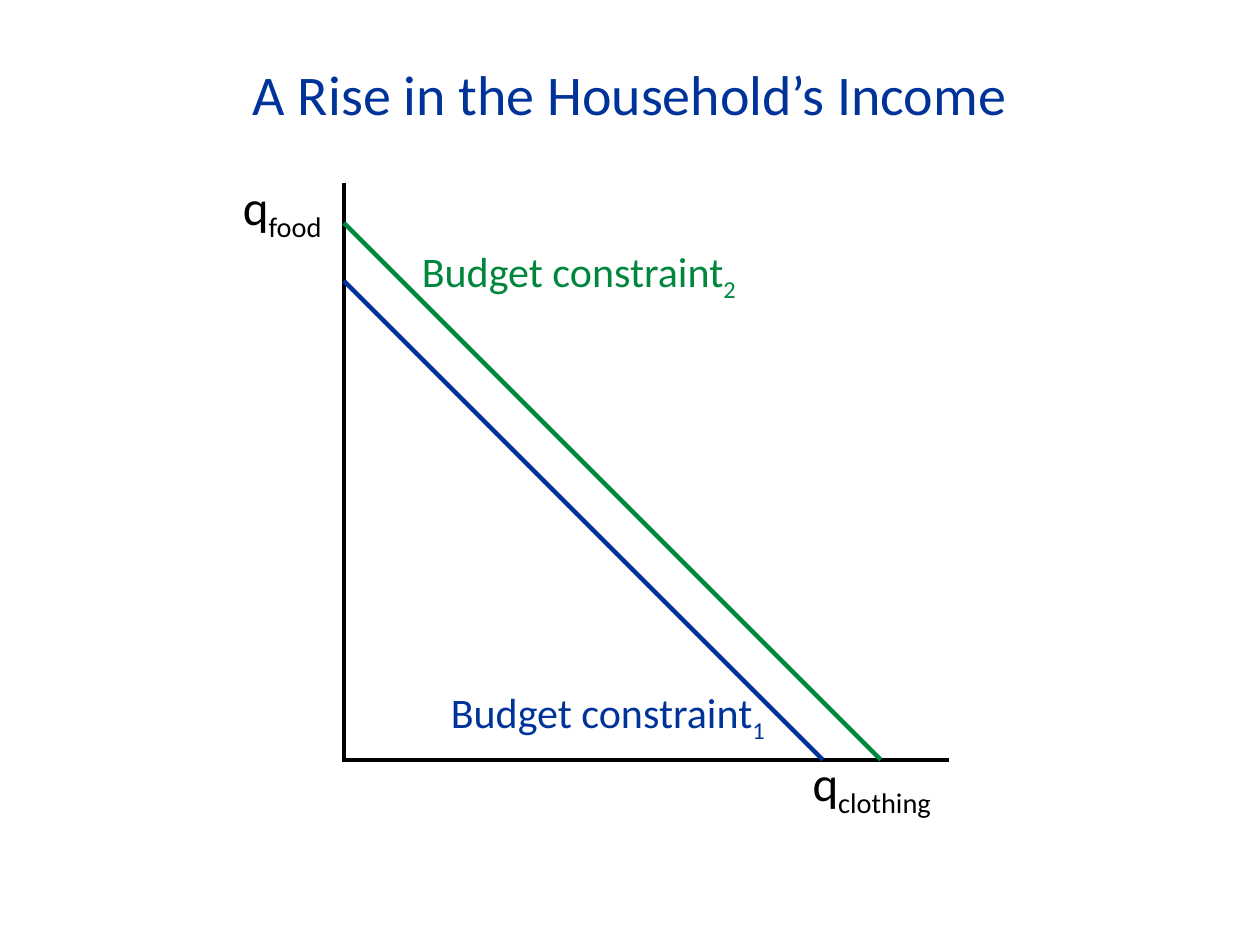
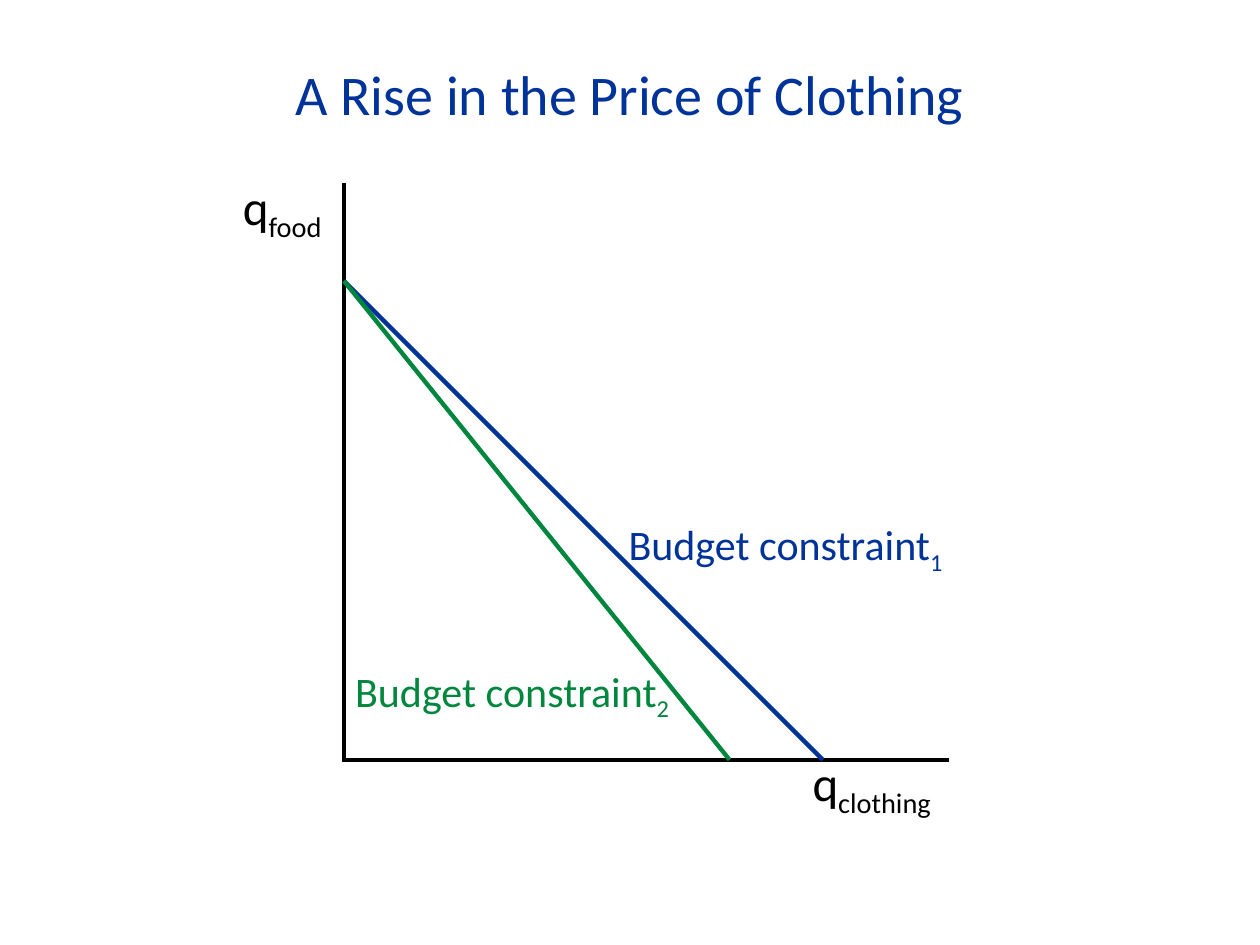
from dataclasses import dataclass

import pptx
import pptx.dml.color
import pptx.enum.shapes
import pptx.enum.text
import pptx.util
from lxml import etree

COLUMNS, ROWS = 100, 75
CELL = pptx.util.Inches(0.1)


def cells(count):
    return round(count * CELL)


def color(value):
    return pptx.dml.color.RGBColor.from_string(value)


@dataclass(frozen=True)
class Theme:
    font: str = "Calibri"
    white: str = "FFFFFF"
    black: str = "000000"
    blue: str = "003399"
    green: str = "00863D"
    title_size: int = 32
    axis_size: int = 28
    label_size: int = 24
    line_width: float = 2.5


@dataclass(frozen=True)
class Box:
    left: float
    top: float
    width: float
    height: float

    def from_origin(self, right, up):
        return self.left + right, self.top + self.height - up


@dataclass(frozen=True)
class Constraint:
    number: str
    color: str
    food: float
    clothing: float
    label_right: float
    label_up: float


THEME = Theme()
BODY = Box(7, 4.5, 86, 66)
PLOT = Box(27.3, 14.5, 48, 45.8)

SLIDES = [
    ("A Rise in the Household’s Income", [
        Constraint("1", THEME.blue, 38, 38, 7.5, 6.3),
        Constraint("2", THEME.green, 42.6, 42.6, 5.2, 41.3),
    ]),
    ("A Rise in the Price of Clothing", [
        Constraint("1", THEME.blue, 38, 38, 21.6, 19.6),
        Constraint("2", THEME.green, 38, 30.6, -0.1, 8),
    ]),
]


def style(paragraph, size, text_color):
    paragraph.font.name = THEME.font
    paragraph.font.size = pptx.util.Pt(size)
    paragraph.font.color.rgb = color(text_color)


def add_text_box(slide, box):
    shape = slide.shapes.add_textbox(
        *map(cells, (box.left, box.top, box.width, box.height)))
    shape.text_frame.word_wrap = True
    return shape


def add_line(slide, start, end, line_color):
    connector = slide.shapes.add_connector(
        pptx.enum.shapes.MSO_CONNECTOR.STRAIGHT, *map(cells, (*start, *end)))
    connector.line.color.rgb = color(line_color)
    connector.line.width = pptx.util.Pt(THEME.line_width)
    etree.SubElement(connector._element.spPr, pptx.oxml.ns.qn("a:effectLst"))


def add_label(slide, box, word, subscript, size, text_color, spacing=None):
    frame = add_text_box(slide, box).text_frame
    frame.auto_size = pptx.enum.text.MSO_AUTO_SIZE.SHAPE_TO_FIT_TEXT
    paragraph = frame.paragraphs[0]
    paragraph.line_spacing = spacing
    paragraph.add_run().text = word
    lowered = paragraph.add_run()
    lowered.text = subscript
    lowered._r.get_or_add_rPr().set("baseline", "-25000")
    style(paragraph, size, text_color)


def add_title(slide, box, title):
    shape = add_text_box(slide, box)
    shape.fill.solid()
    shape.fill.fore_color.rgb = color(THEME.white)
    frame = shape.text_frame
    frame.margin_top = cells(0.2)
    frame.margin_bottom = 0
    paragraph = frame.paragraphs[0]
    paragraph.text = title
    paragraph.alignment = pptx.enum.text.PP_ALIGN.CENTER
    style(paragraph, THEME.title_size, THEME.blue)


def add_axes(slide, plot):
    add_line(slide, plot.from_origin(0, plot.height),
             plot.from_origin(0, -0.2), THEME.black)
    add_line(slide, plot.from_origin(0, 0),
             plot.from_origin(plot.width, 0), THEME.black)
    add_label(slide, Box(*plot.from_origin(36.2, 1.1), 13.2, 5.7),
              "q", "clothing", THEME.axis_size, THEME.black)
    add_label(slide, Box(*plot.from_origin(-9, 46.3), 11.7, 4.9),
              "q", "food", THEME.axis_size, THEME.black, spacing=0.8)


def add_constraint(slide, plot, constraint):
    add_line(slide, plot.from_origin(0, constraint.food),
             plot.from_origin(constraint.clothing, 0), constraint.color)
    corner = plot.from_origin(constraint.label_right, constraint.label_up)
    add_label(slide, Box(*corner, 31.7, 5), "Budget constraint",
              constraint.number, THEME.label_size, constraint.color)


def add_budget_slide(presentation, title, constraints):
    slide = presentation.slides.add_slide(presentation.slide_layouts[6])
    add_title(slide, BODY, title)
    add_axes(slide, PLOT)
    for constraint in constraints:
        add_constraint(slide, PLOT, constraint)


def main():
    presentation = pptx.Presentation()
    presentation.slide_width = cells(COLUMNS)
    presentation.slide_height = cells(ROWS)
    for title, constraints in SLIDES:
        add_budget_slide(presentation, title, constraints)
    presentation.save("out.pptx")


if __name__ == "__main__":
    main()
